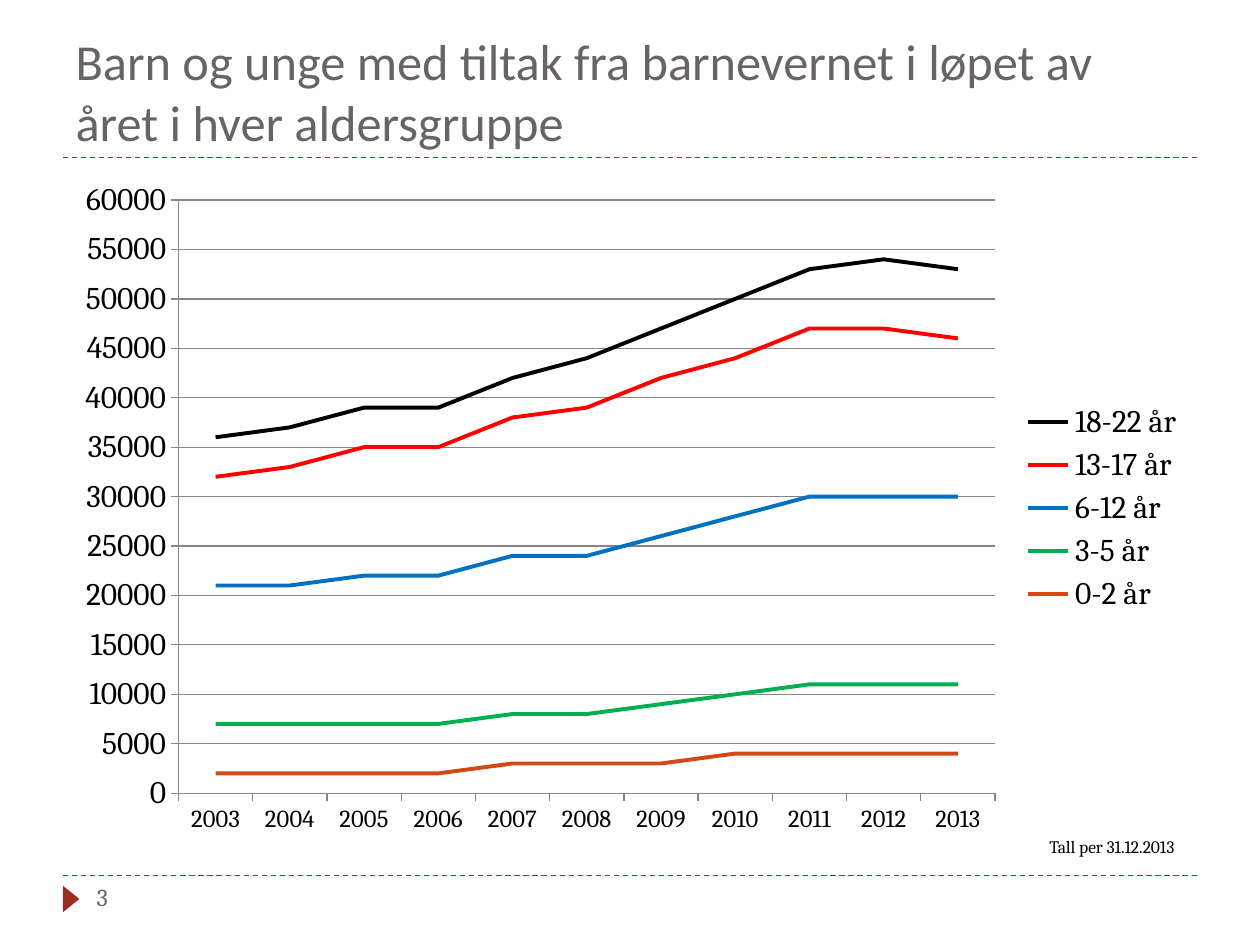
from lxml import etree
from pptx import Presentation
from pptx.chart.data import CategoryChartData
from pptx.dml.color import RGBColor
from pptx.enum.chart import XL_CHART_TYPE, XL_LEGEND_POSITION, XL_TICK_MARK
from pptx.enum.dml import MSO_LINE
from pptx.enum.shapes import MSO_CONNECTOR, MSO_SHAPE
from pptx.enum.text import MSO_ANCHOR, MSO_AUTO_SIZE, PP_ALIGN
from pptx.oxml.ns import qn
from pptx.util import Pt

STACKED = XL_CHART_TYPE.LINE_STACKED
RIGHT = XL_LEGEND_POSITION.RIGHT
OUT, NO_TICK = XL_TICK_MARK.OUTSIDE, XL_TICK_MARK.NONE
DASH = MSO_LINE.DASH
STRAIGHT = MSO_CONNECTOR.STRAIGHT
TRIANGLE = MSO_SHAPE.ISOSCELES_TRIANGLE
BOTTOM, TOP = MSO_ANCHOR.BOTTOM, MSO_ANCHOR.TOP
FIXED = MSO_AUTO_SIZE.NONE
LEFT = PP_ALIGN.LEFT

TITLE = "Barn og unge med tiltak fra barnevernet i løpet av året i hver aldersgruppe"
PAGE = "3"
NOTE = "Tall per 31.12.2013"
YEARS = [str(year) for year in range(2003, 2014)]
GROUPS = [
    ("0-2 år", "D34817",
     (2000, 2000, 2000, 2000, 3000, 3000, 3000, 4000, 4000, 4000, 4000)),
    ("3-5 år", "00B050",
     (5000, 5000, 5000, 5000, 5000, 5000, 6000, 6000, 7000, 7000, 7000)),
    ("6-12 år", "0070C0",
     (14000, 14000, 15000, 15000, 16000, 16000, 17000, 18000, 19000, 19000, 19000)),
    ("13-17 år", "FF0000",
     (11000, 12000, 13000, 13000, 14000, 15000, 16000, 16000, 17000, 17000, 16000)),
    ("18-22 år", "000000",
     (4000, 4000, 4000, 4000, 4000, 5000, 5000, 6000, 6000, 7000, 7000)),
]

THEME = {
    "head": {"name": "Calibri", "size": Pt(28.8), "color": "696464"},
    "page": {"name": "Cambria", "size": Pt(14), "color": "696464"},
    "note": {"name": "Cambria", "size": Pt(10), "color": "000000"},
    "chart": {"name": "Cambria", "size": Pt(18), "color": "000000"},
    "years": {"name": "Cambria", "size": Pt(14), "color": "000000"},
    "rule": {"color": "9B2D1F", "width": Pt(0.75), "dash_style": DASH},
    "grid": {"color": "868686", "width": Pt(0.75)},
    "mark": "9B2D1F",
    "curve": Pt(2.25),
}
EDGE, WIDE, TALL = 36, 648, 388.8
RULES = (90, 500.4)
PLOT = {"x": 66 / WIDE, "y": 18.5 / TALL, "w": 466.7 / WIDE, "h": 339 / TALL}


def put(item, form):
    for key, value in form.items():
        if key == "color":
            if hasattr(item, "fill"):
                item.fill.solid()
            item.color.rgb = RGBColor.from_string(value)
        else:
            setattr(item, key, value)


def place(shape, *box):
    for key, value in zip(("left", "top", "width", "height"), box):
        setattr(shape, key, Pt(value))


def write(shape, text, style, anchor, wrap=True):
    frame = shape.text_frame
    put(frame, {"text": text, "word_wrap": wrap, "auto_size": FIXED,
                "vertical_anchor": anchor})
    line = frame.paragraphs[0]
    line.alignment = LEFT
    put(line.runs[0].font, THEME[style])


def label(slide, text, style, box, wrap=True):
    shape = slide.shapes.add_textbox(*map(Pt, box))
    write(shape, text, style, TOP, wrap)


def rule(slide, top):
    line = slide.shapes.add_connector(
        STRAIGHT, Pt(EDGE), Pt(top), Pt(EDGE + WIDE), Pt(top))
    put(line.line, THEME["rule"])
    etree.SubElement(line._element.spPr, qn("a:effectLst"))


def draw_mark(slide):
    mark = slide.shapes.add_shape(TRIANGLE, *map(Pt, (33.1, 509, 15.1, 9.4)))
    mark.rotation = 90
    mark.shadow.inherit = False
    mark.fill.solid()
    mark.fill.fore_color.rgb = RGBColor.from_string(THEME["mark"])
    mark.line.fill.background()


def fix_plot(chart):
    area = chart._chartSpace.chart.plotArea
    for old in area.findall(qn("c:layout")):
        area.remove(old)
    lay = etree.Element(qn("c:layout"))
    area.insert(0, lay)
    man = etree.SubElement(lay, qn("c:manualLayout"))
    modes = {"layoutTarget": "inner", "xMode": "edge", "yMode": "edge"}
    for key, value in {**modes, **PLOT}.items():
        etree.SubElement(man, qn("c:" + key)).set("val", str(value))


def draw_chart(slide):
    data = CategoryChartData(number_format="0")
    data.categories = YEARS
    for name, color, values in GROUPS:
        data.add_series(name, values)
    box = map(Pt, (EDGE, 95.8, WIDE, TALL))
    chart = slide.shapes.add_chart(STACKED, *box, data).chart
    put(chart, {"has_title": False, "has_legend": True})
    put(chart.legend, {"position": RIGHT, "include_in_layout": False})
    put(chart.font, THEME["chart"])
    put(chart.value_axis, {
        "minimum_scale": 0, "maximum_scale": 60000, "major_unit": 5000,
        "has_major_gridlines": True, "major_tick_mark": OUT,
        "minor_tick_mark": NO_TICK})
    put(chart.value_axis.tick_labels,
        {"number_format": "0", "number_format_is_linked": False})
    put(chart.category_axis, {"major_tick_mark": OUT, "minor_tick_mark": NO_TICK})
    put(chart.category_axis.tick_labels.font, THEME["years"])
    for part in (chart.value_axis, chart.category_axis,
                 chart.value_axis.major_gridlines):
        put(part.format.line, THEME["grid"])
    plot = chart.plots[0]
    plot.vary_by_categories = False
    for curve, (name, color, values) in zip(plot.series, GROUPS):
        curve.smooth = False
        put(curve.format.line, {"color": color, "width": THEME["curve"]})
    fix_plot(chart)


def main():
    deck = Presentation()
    put(deck, {"slide_width": Pt(720), "slide_height": Pt(540)})
    slide = deck.slides.add_slide(deck.slide_layouts[5])
    for top in RULES:
        rule(slide, top)
    draw_mark(slide)
    head = slide.shapes.title
    place(head, EDGE, 12.2, WIDE, 77.8)
    write(head, TITLE, "head", BOTTOM)
    label(slide, PAGE, "page", (48.2, 500.4, 156, 28.8))
    draw_chart(slide)
    label(slide, NOTE, "note", (592.6, 474.2, 98.6, 19.4), False)
    deck.save("out.pptx")


if __name__ == "__main__":
    main()
